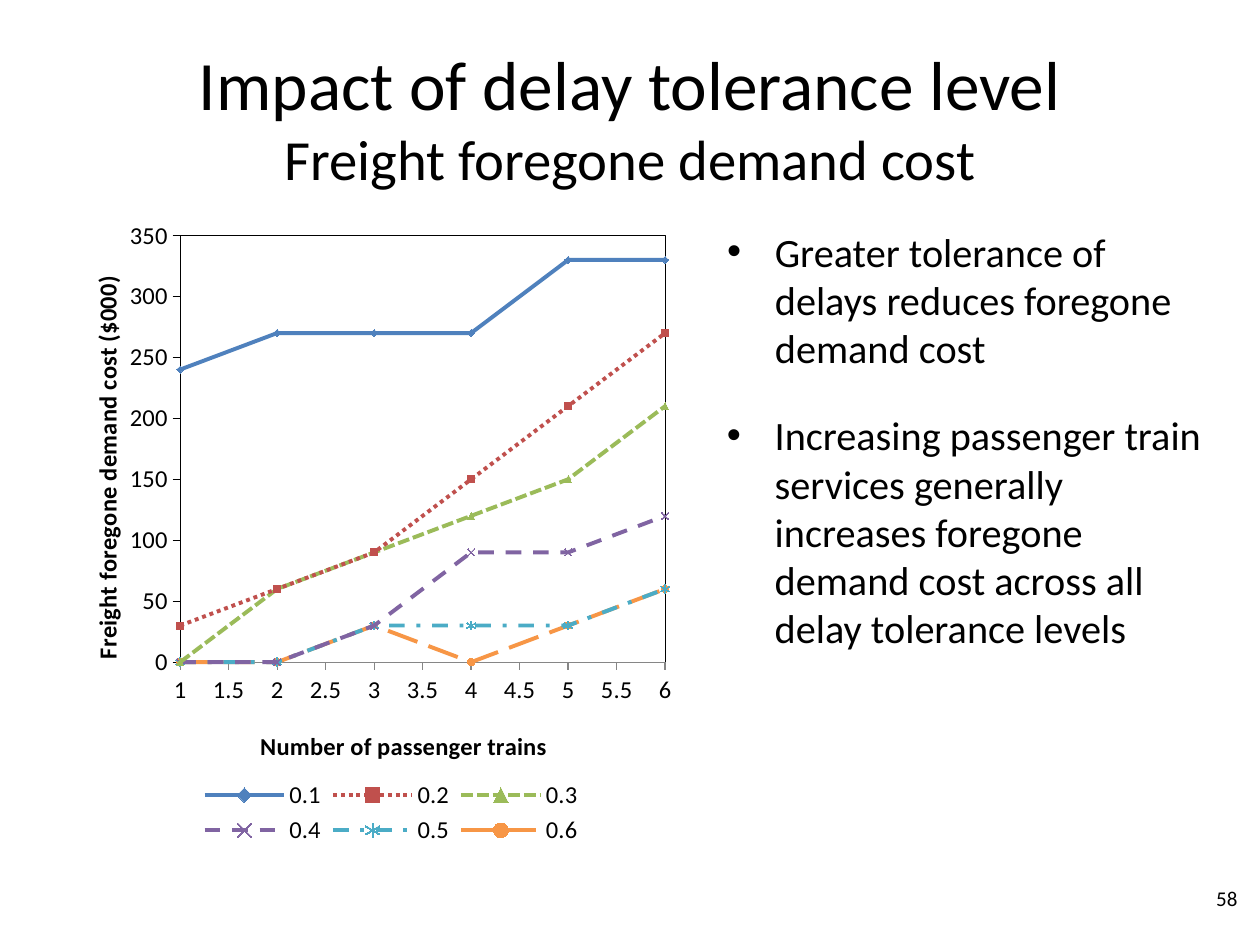
from dataclasses import dataclass
from lxml.etree import SubElement
from pptx import Presentation
from pptx.chart.data import XyChartData
from pptx.dml.color import RGBColor
from pptx.enum.chart import XL_CHART_TYPE, XL_LEGEND_POSITION, XL_MARKER_STYLE, XL_TICK_MARK
from pptx.enum.dml import MSO_LINE
from pptx.enum.text import MSO_ANCHOR, MSO_AUTO_SIZE, PP_ALIGN
from pptx.oxml import parse_xml
from pptx.oxml.ns import nsdecls, qn
from pptx.util import Inches, Pt


@dataclass(frozen=True)
class Theme:
    font: str = "Calibri"
    ink: str = "000000"
    axis: str = "868686"
    title: float = 39.6
    subtitle: float = 32.4
    body: float = 23
    chart: float = 14
    number: float = 12
    series_line: float = 2.25
    axis_line: float = 0.75


THEME = Theme()
INDENT = Inches(0.38)
LEFT, TOP = 0.58, 1.75  # chart column and content row
TEXT_LEFT = 5.67

# Delay tolerance: costs, colour, marker, marker size, dash
SERIES = {
    "0.1": ((240, 270, 270, 270, 330, 330), "4F81BD", XL_MARKER_STYLE.DIAMOND, 4, MSO_LINE.SOLID),
    "0.2": ((30, 60, 90, 150, 210, 270), "C0504D", XL_MARKER_STYLE.SQUARE, 4, MSO_LINE.ROUND_DOT),
    "0.3": ((0, 60, 90, 120, 150, 210), "9BBB59", XL_MARKER_STYLE.TRIANGLE, 4, MSO_LINE.SQUARE_DOT),
    "0.4": ((0, 0, 30, 90, 90, 120), "8064A2", XL_MARKER_STYLE.X, 4, MSO_LINE.DASH),
    "0.5": ((0, 0, 30, 30, 30, 60), "4BACC6", XL_MARKER_STYLE.STAR, 5, MSO_LINE.DASH_DOT),
    "0.6": ((0, 0, 30, 0, 30, 60), "F79646", XL_MARKER_STYLE.CIRCLE, 4, MSO_LINE.LONG_DASH),
}


def style_font(font, size, color=THEME.ink, bold=False):
    font.name, font.size, font.bold = THEME.font, Pt(size), bold
    font.color.rgb = RGBColor.from_string(color)


def style_line(line, color, width):
    line.color.rgb = RGBColor.from_string(color)
    line.width = Pt(width)


def place(shape, left, top, width, height):
    shape.left, shape.top = Inches(left), Inches(top)
    shape.width, shape.height = Inches(width), Inches(height)


def write(shape, *lines, align=PP_ALIGN.LEFT, anchor=MSO_ANCHOR.TOP, bullet=False):
    """Write (text, size) lines into one paragraph, parted by line breaks."""
    frame = shape.text_frame
    frame.word_wrap, frame.auto_size = True, MSO_AUTO_SIZE.NONE
    frame.vertical_anchor = anchor
    paragraph = frame.paragraphs[0]
    paragraph.alignment, paragraph.space_before = align, Pt(0)
    if bullet:
        properties = paragraph._p.get_or_add_pPr()
        properties.set("marL", str(INDENT))
        properties.set("indent", str(-INDENT))
        SubElement(properties, qn("a:buFont"), typeface="Arial")
        SubElement(properties, qn("a:buChar"), char="•")
    for index, (text, size) in enumerate(lines):
        if index:
            paragraph.add_line_break()
        run = paragraph.add_run()
        run.text = text
        style_font(run.font, size)


def set_layout(element, position, inner=False, **shares):
    """Fix a chart part at shares (x, y, w, h) of the chart's size."""
    for old in element.findall(qn("c:layout")):
        element.remove(old)
    target = '<c:layoutTarget val="inner"/>' if inner else ""
    modes = "".join(f'<c:{key}Mode val="edge"/>' for key in ("x", "y"))
    values = "".join(f'<c:{key} val="{value}"/>' for key, value in shares.items())
    element.insert(position, parse_xml(
        f'<c:layout {nsdecls("c")}><c:manualLayout>{target}{modes}{values}'
        "</c:manualLayout></c:layout>"))


def style_axis(axis, title, color, x, y):
    axis.has_major_gridlines = False
    axis.major_tick_mark = XL_TICK_MARK.OUTSIDE
    axis.minor_tick_mark = XL_TICK_MARK.NONE
    style_line(axis.format.line, color, THEME.axis_line)
    style_font(axis.tick_labels.font, THEME.chart)
    run = axis.axis_title.text_frame.paragraphs[0].add_run()
    run.text = title
    style_font(run.font, THEME.chart, bold=True)
    set_layout(axis.axis_title._element, 1, x=x, y=y)


def style_series(series, color, marker, size, dash):
    series.smooth = False
    style_line(series.format.line, color, THEME.series_line)
    series.format.line.dash_style = dash
    series.marker.style, series.marker.size = marker, size
    style_line(series.marker.format.line, color, THEME.axis_line)
    if marker in (XL_MARKER_STYLE.X, XL_MARKER_STYLE.STAR):
        series.marker.format.fill.background()
    else:
        series.marker.format.fill.solid()
        series.marker.format.fill.fore_color.rgb = RGBColor.from_string(color)


def add_cost_chart(slide):
    data = XyChartData()
    for name, (costs, *_) in SERIES.items():
        series = data.add_series(name)
        for trains, cost in enumerate(costs, start=1):
            series.add_data_point(trains, cost)
    chart = slide.shapes.add_chart(
        XL_CHART_TYPE.XY_SCATTER_LINES, Inches(LEFT), Inches(TOP),
        Inches(5), Inches(5), data).chart
    chart.has_title = False
    style_font(chart.font, THEME.chart)
    plot = chart.plots[0]
    plot.vary_by_categories = False
    for series in plot.series:
        style_series(series, *SERIES[series.name][1:])

    # Axes
    chart.category_axis.minimum_scale, chart.category_axis.maximum_scale = 1, 6
    style_axis(chart.category_axis, "Number of passenger trains", THEME.axis, 0.29, 0.8)
    style_axis(chart.value_axis, "Freight foregone demand cost ($000)", THEME.ink, 0.02, 0.08)

    # Legend in two rows
    chart.has_legend = True
    chart.legend.position = XL_LEGEND_POSITION.BOTTOM
    chart.legend.include_in_layout = False
    style_font(chart.legend.font, THEME.chart)
    set_layout(chart.legend._element, 1, x=0.19, y=0.88, w=0.63, h=0.12)

    # Framed plot area
    plot_area = chart._chartSpace.chart.plotArea
    set_layout(plot_area, 0, inner=True, x=0.17, y=0.02, w=0.77, h=0.68)
    plot_area.append(parse_xml(
        f'<c:spPr {nsdecls("c", "a")}><a:noFill/><a:ln w="{Pt(THEME.axis_line)}">'
        f'<a:solidFill><a:srgbClr val="{THEME.ink}"/></a:solidFill></a:ln></c:spPr>'))


def add_text(slide, box, *lines, **form):
    shape = slide.shapes.add_textbox(*(Inches(length) for length in box))
    write(shape, *lines, **form)


def main():
    presentation = Presentation()
    presentation.slide_width, presentation.slide_height = Inches(10), Inches(7.5)
    slide = presentation.slides.add_slide(presentation.slide_layouts[1])

    # Title and first point
    title, body = slide.shapes.title, slide.placeholders[1]
    place(title, 0.5, 0.3, 9, 1.25)
    write(title, ("Impact of delay tolerance level", THEME.title),
          ("Freight foregone demand cost", THEME.subtitle),
          align=PP_ALIGN.CENTER, anchor=MSO_ANCHOR.MIDDLE)
    place(body, TEXT_LEFT, TOP, 3.83, 1.58)
    write(body, ("Greater tolerance of delays reduces foregone demand cost", THEME.body),
          bullet=True)

    # Slide number, chart and second point
    add_text(slide, (8.75, 6.93, 1.17, 0.4), ("58", THEME.number),
             align=PP_ALIGN.RIGHT, anchor=MSO_ANCHOR.MIDDLE)
    add_cost_chart(slide)
    add_text(slide, (TEXT_LEFT, 3.21, 4.08, 2.04),
             ("Increasing passenger train services generally increases foregone "
              "demand cost across all delay tolerance levels", THEME.body), bullet=True)
    presentation.save("out.pptx")


if __name__ == "__main__":
    main()
